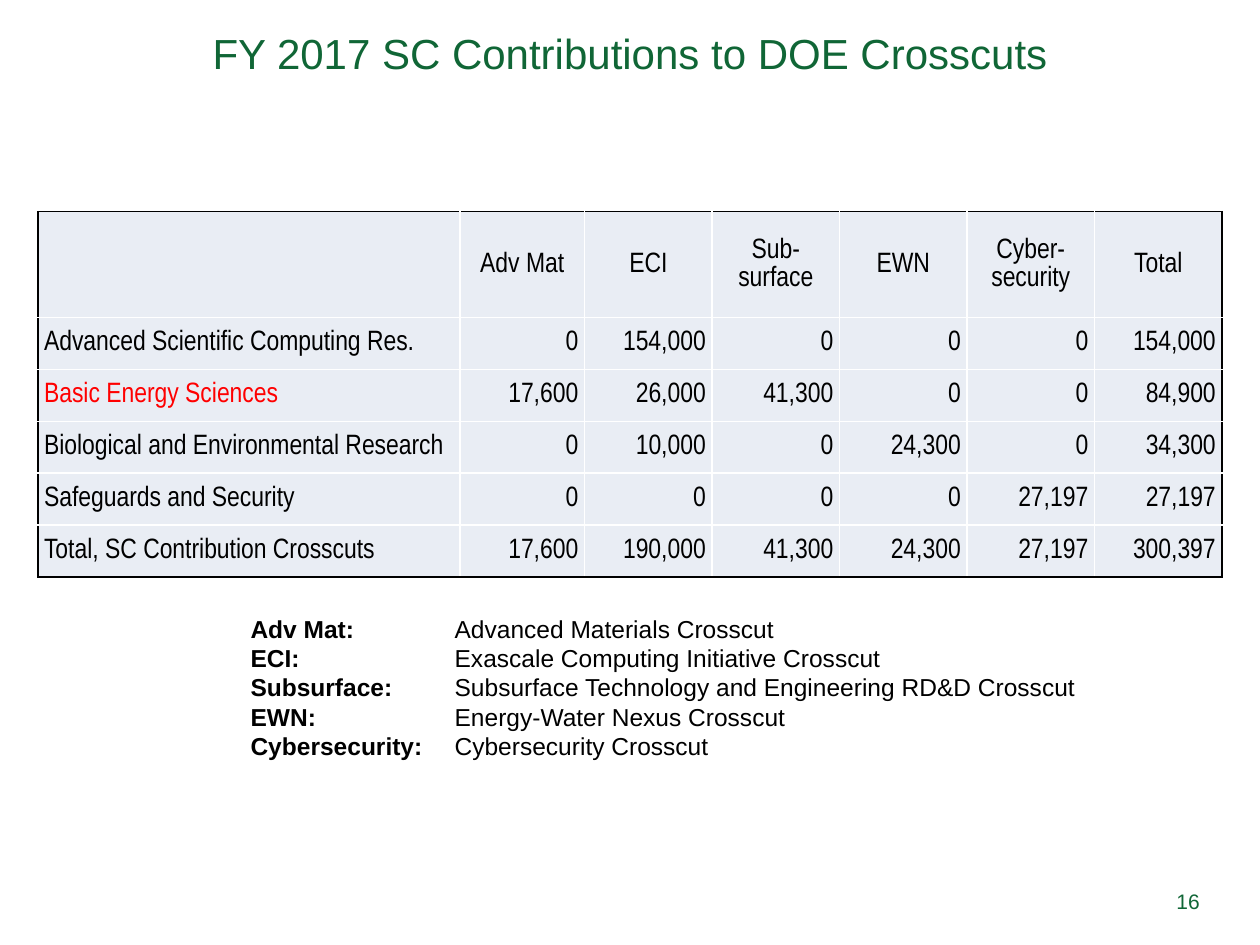
from dataclasses import dataclass

import lxml.etree
import pptx
import pptx.dml.color
import pptx.enum.shapes
import pptx.enum.text
import pptx.oxml.ns
import pptx.util

ALIGN = pptx.enum.text.PP_ALIGN
MIDDLE = pptx.enum.text.MSO_ANCHOR.MIDDLE
GREEN, BLACK, WHITE, RED, PALE = "106636", "000000", "FFFFFF", "FF0000", "E9EDF4"
WIDTH, HEIGHT = 10, 7.5
TABLE_LEFT, TABLE_TOP, TABLE_WIDTH, TABLE_HEIGHT = 0.3, 1.68, 9.4, 2.9
NAME_COL, FIRST_COL, HEADER_ROW = 3.35, 0.99, 0.84
TERM_INDENT = 1.62


@dataclass
class Program:
    name: str
    amounts: tuple[int, ...]
    color: str = BLACK


@dataclass
class Term:
    short: str
    meaning: str


HEADERS = ("", "Adv Mat", "ECI", "Sub-surface", "EWN", "Cyber- security", "Total")
PROGRAMS = (
    Program("Advanced Scientific Computing Res.", (0, 154000, 0, 0, 0, 154000)),
    Program("Basic Energy Sciences", (17600, 26000, 41300, 0, 0, 84900), RED),
    Program("Biological and Environmental Research", (0, 10000, 0, 24300, 0, 34300)),
    Program("Safeguards and Security", (0, 0, 0, 0, 27197, 27197)),
    Program("Total, SC Contribution Crosscuts",
            (17600, 190000, 41300, 24300, 27197, 300397)),
)
TERMS = (
    Term("Adv Mat", "Advanced Materials Crosscut"),
    Term("ECI", "Exascale Computing Initiative Crosscut"),
    Term("Subsurface", "Subsurface Technology and Engineering RD&D Crosscut"),
    Term("EWN", "Energy-Water Nexus Crosscut"),
    Term("Cybersecurity", "Cybersecurity Crosscut"),
)


def rgb(color: str) -> pptx.dml.color.RGBColor:
    return pptx.dml.color.RGBColor.from_string(color)


def box(*lengths: float) -> list[pptx.util.Length]:
    return [pptx.util.Inches(length) for length in lengths]


def style(p, size: float, color: str, font: str = "Arial", align=ALIGN.LEFT) -> None:
    p.alignment = align
    p.font.size = pptx.util.Pt(size)
    p.font.name = font
    p.font.color.rgb = rgb(color)


def set_borders(cell, outer: dict[str, bool]) -> None:
    tc_pr = cell._tc.get_or_add_tcPr()
    qn = pptx.oxml.ns.qn
    for i, (side, is_outer) in enumerate(outer.items()):
        ln = lxml.etree.Element(qn(f"a:ln{side}"), w=str(pptx.util.Pt(1)))
        fill = lxml.etree.SubElement(ln, qn("a:solidFill"))
        lxml.etree.SubElement(fill, qn("a:srgbClr"), val=BLACK if is_outer else WHITE)
        tc_pr.insert(i, ln)


def add_title(s, text: str) -> None:
    sp = s.shapes.title
    sp.left, sp.top, sp.width, sp.height = box(0, -0.21, WIDTH, HEIGHT / 6)
    tf = sp.text_frame
    tf.text = text
    tf.vertical_anchor = MIDDLE
    style(tf.paragraphs[0], 24, GREEN, align=ALIGN.CENTER)


def fill_cell(cell, text: str, color: str, align, is_header: bool) -> None:
    cell.fill.solid()
    cell.fill.fore_color.rgb = rgb(PALE)
    cell.vertical_anchor = MIDDLE
    cell.margin_left = cell.margin_right = pptx.util.Inches(0.05)
    cell.margin_top = cell.margin_bottom = 0
    cell.text = text
    p = cell.text_frame.paragraphs[0]
    style(p, 16, color, "Arial Narrow", align)
    p.space_after = pptx.util.Pt(2.5 if is_header else 6)
    if is_header:
        p.line_spacing = 1.05


def add_crosscut_table(s) -> None:
    rows, cols = len(PROGRAMS) + 1, len(HEADERS)
    table = s.shapes.add_table(
        rows, cols, *box(TABLE_LEFT, TABLE_TOP, TABLE_WIDTH, TABLE_HEIGHT)).table
    other_col = (TABLE_WIDTH - NAME_COL - FIRST_COL) / (cols - 2)
    body_row = (TABLE_HEIGHT - HEADER_ROW) / (rows - 1)
    for column, width in zip(table.columns, [NAME_COL, FIRST_COL] + [other_col] * (cols - 2)):
        column.width = pptx.util.Inches(width)
    for row, height in zip(table.rows, [HEADER_ROW] + [body_row] * (rows - 1)):
        row.height = pptx.util.Inches(height)

    for c, text in enumerate(HEADERS):
        fill_cell(table.cell(0, c), text, BLACK, ALIGN.CENTER, True)
    for r, program in enumerate(PROGRAMS, 1):
        fill_cell(table.cell(r, 0), program.name, program.color, ALIGN.LEFT, False)
        for c, amount in enumerate(program.amounts, 1):
            fill_cell(table.cell(r, c), f"{amount:,}", BLACK, ALIGN.RIGHT, False)
    for r in range(rows):
        for c in range(cols):
            set_borders(table.cell(r, c), {
                "L": c == 0, "R": c == cols - 1, "T": r == 0, "B": r == rows - 1})


def add_glossary(s) -> None:
    sp = s.shapes.add_shape(
        pptx.enum.shapes.MSO_SHAPE.RECTANGLE, *box(1.89, 4.82, 6.77, 1.28))
    sp.shadow.inherit = False
    sp.fill.solid()
    sp.fill.fore_color.rgb = rgb(WHITE)
    sp.line.fill.background()
    tf = sp.text_frame
    tf.word_wrap = True
    tf.vertical_anchor = pptx.enum.text.MSO_ANCHOR.TOP
    for i, term in enumerate(TERMS):
        p = tf.add_paragraph() if i else tf.paragraphs[0]
        p_pr = p._p.get_or_add_pPr()
        indent = pptx.util.Inches(TERM_INDENT)
        p_pr.set("marL", str(indent))
        p_pr.set("indent", str(-indent))
        style(p, 14, BLACK)
        for text, bold in ((f"{term.short}:\t", True), (term.meaning, False)):
            r = p.add_run()
            r.text = text
            r.font.bold = bold


def add_page_number(s, number: int) -> None:
    tf = s.shapes.add_textbox(*box(9.2, 6.95, 0.42, 0.4)).text_frame
    tf.word_wrap = True
    tf.vertical_anchor = MIDDLE
    tf.text = str(number)
    style(tf.paragraphs[0], 12, GREEN, align=ALIGN.RIGHT)


def main() -> None:
    prs = pptx.Presentation()
    prs.slide_width, prs.slide_height = box(WIDTH, HEIGHT)
    s = prs.slides.add_slide(prs.slide_layouts.get_by_name("Title Only"))
    add_title(s, "FY 2017 SC Contributions to DOE Crosscuts")
    add_crosscut_table(s)
    add_glossary(s)
    add_page_number(s, 16)
    prs.save("out.pptx")


if __name__ == "__main__":
    main()
